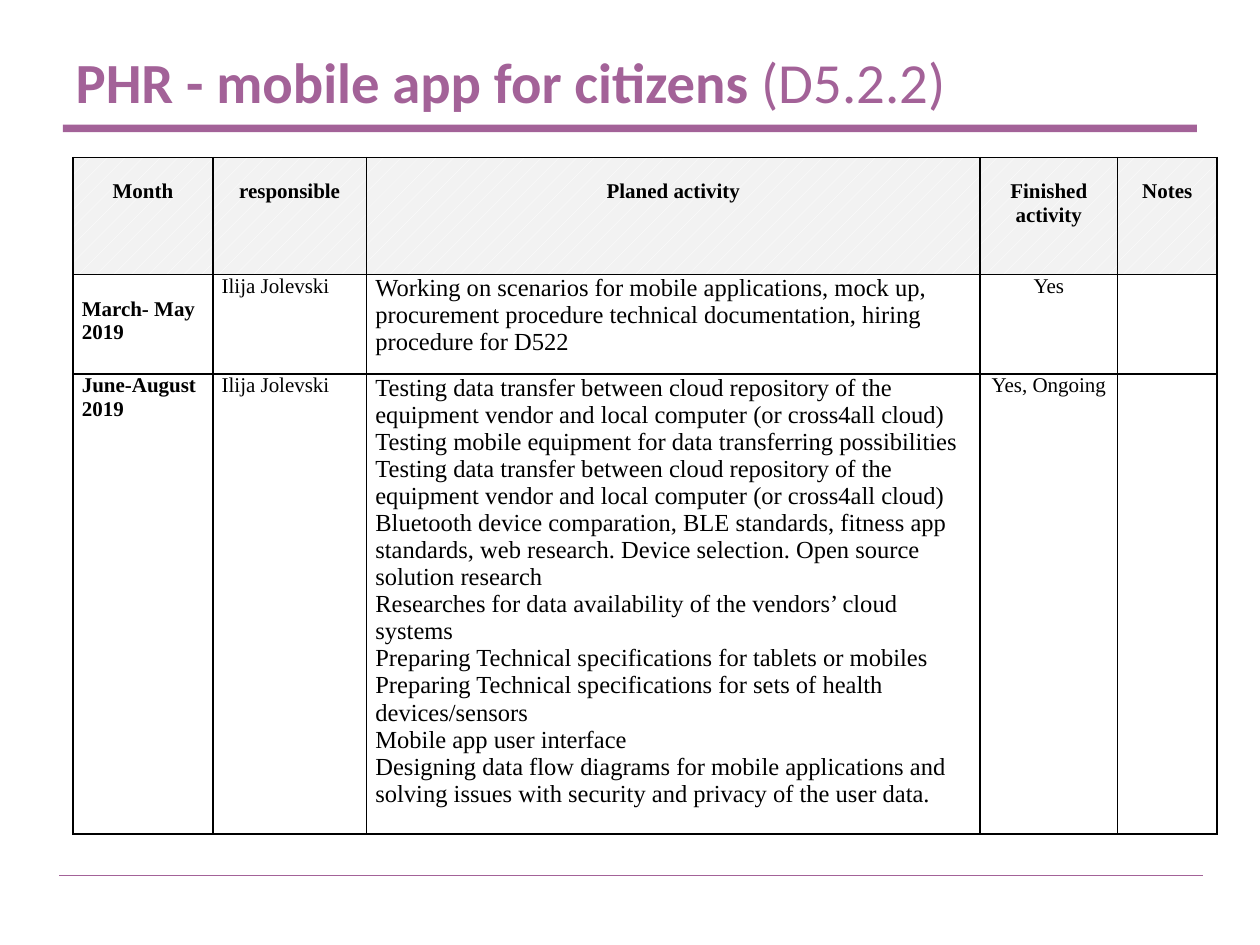
import dataclasses

import lxml.etree
import pptx
import pptx.dml.color
import pptx.enum.dml
import pptx.enum.shapes
import pptx.enum.text
import pptx.oxml.ns
import pptx.util

Inches = pptx.util.Inches
Pt = pptx.util.Pt
ALIGN = pptx.enum.text.PP_ALIGN
qn = pptx.oxml.ns.qn


@dataclasses.dataclass(frozen=True)
class Theme:
    accent: str = "A36298"
    ink: str = "000000"
    header_back: str = "F2F2F2"
    header_dots: str = "FFFFFF"
    title_font: str = "Calibri"
    table_font: str = "Times New Roman"
    title_size: float = 32.4
    label_size: float = 12
    activity_size: float = 14


def rgb(value):
    return pptx.dml.color.RGBColor.from_string(value)


class SlideBuilder:
    def __init__(self, prs, theme):
        self.theme = theme
        self.slide = prs.slides.add_slide(prs.slide_layouts[5])

    def format_font(self, font, name, size, color, bold):
        font.name, font.size, font.bold = name, Pt(size), bold
        font.color.rgb = rgb(color)

    def title(self, parts, left, top, width, height):
        """Fill the title with (text, bold) parts."""
        sp = self.slide.shapes.title
        sp.left, sp.top = Inches(left), Inches(top)
        sp.width, sp.height = Inches(width), Inches(height)
        tf = sp.text_frame
        tf.auto_size = pptx.enum.text.MSO_AUTO_SIZE.NONE
        tf.vertical_anchor = pptx.enum.text.MSO_ANCHOR.MIDDLE
        p = tf.paragraphs[0]
        p.alignment = ALIGN.LEFT
        for text, bold in parts:
            r = p.add_run()
            r.text = text
            self.format_font(r.font, self.theme.title_font, self.theme.title_size,
                             self.theme.accent, bold)

    def bar(self, left, top, width, height):
        sp = self.slide.shapes.add_shape(
            pptx.enum.shapes.MSO_SHAPE.RECTANGLE,
            Inches(left), Inches(top), Inches(width), Inches(height))
        sp.shadow.inherit = False
        sp.fill.solid()
        sp.fill.fore_color.rgb = rgb(self.theme.accent)
        sp.line.fill.background()

    def rule(self, left, right, y):
        line = self.slide.shapes.add_connector(
            pptx.enum.shapes.MSO_CONNECTOR.STRAIGHT,
            Inches(left), Inches(y), Inches(right), Inches(y))
        line.line.color.rgb = rgb(self.theme.accent)
        line.line.width = Pt(0.75)
        lxml.etree.SubElement(line._element.spPr, qn("a:effectLst"))

    def table(self, left, top, widths, heights):
        table = self.slide.shapes.add_table(
            len(heights), len(widths), Inches(left), Inches(top),
            Inches(sum(widths)), Inches(sum(heights))).table
        table.first_row = table.horz_banding = False
        for column, width in zip(table.columns, widths):
            column.width = Inches(width)
        for row, height in zip(table.rows, heights):
            row.height = Inches(height)
        return table

    def borders(self, cell):
        tc_pr = cell._tc.get_or_add_tcPr()
        for side in ("lnL", "lnR", "lnT", "lnB"):
            ln = lxml.etree.SubElement(tc_pr, qn(f"a:{side}"), w=str(Pt(1)))
            fill = lxml.etree.SubElement(ln, qn("a:solidFill"))
            lxml.etree.SubElement(fill, qn("a:srgbClr"), val=self.theme.ink)

    def cell(self, cell, text, size, bold=False, align=ALIGN.LEFT, space_above=0.0, header=False):
        self.borders(cell)
        if header:
            cell.fill.patterned()
            cell.fill.pattern = pptx.enum.dml.MSO_PATTERN.PERCENT_5
            cell.fill.fore_color.rgb = rgb(self.theme.header_dots)
            cell.fill.back_color.rgb = rgb(self.theme.header_back)
        else:
            cell.fill.background()
        cell.margin_left = cell.margin_right = Inches(0.07)
        cell.margin_top, cell.margin_bottom = Inches(space_above), 0
        cell.text_frame.text = text
        for p in cell.text_frame.paragraphs:
            p.alignment = align
            self.format_font(p.font, self.theme.table_font, size, self.theme.ink, bold)
            for r in p.runs:
                self.format_font(r.font, self.theme.table_font, size, self.theme.ink, bold)


HEADERS = ["Month", "responsible", "Planed activity", "Finished activity", "Notes"]
TRANSFER_TEST = ("Testing data transfer between cloud repository of the equipment vendor "
                 "and local computer (or cross4all cloud)")
SUMMER_ACTIVITIES = [
    TRANSFER_TEST,
    "Testing mobile equipment for data transferring possibilities",
    TRANSFER_TEST,
    "Bluetooth device comparation, BLE standards, fitness app standards, web research. "
    "Device selection. Open source solution research",
    "Researches for data availability of the vendors’ cloud systems",
    "Preparing Technical specifications for tablets or mobiles",
    "Preparing Technical specifications for sets of health devices/sensors",
    "Mobile app user interface",
    "Designing data flow diagrams for mobile applications and solving issues with "
    "security and privacy of the user data.",
]
PLAN = [
    ["March- May 2019", "Ilija Jolevski",
     "Working on scenarios for mobile applications, mock up, procurement procedure "
     "technical documentation, hiring procedure for D522", "Yes", ""],
    ["June-August 2019", "Ilija Jolevski", "\n".join(SUMMER_ACTIVITIES), "Yes, Ongoing", ""],
]
LABEL_GAP = 0.18


def main():
    prs = pptx.Presentation()
    prs.slide_width, prs.slide_height = Inches(10), Inches(7.5)
    theme = Theme()
    s = SlideBuilder(prs, theme)

    s.rule(0.47, 9.55, 6.95)
    s.bar(0.5, 0.99, 9, 0.06)
    s.title([("PHR - mobile app for citizens ", True), ("(D5.2.2)", False)], 0.5, 0.3, 9, 0.69)

    table = s.table(0.58, 1.25, [1.11, 1.22, 4.87, 1.09, 0.79], [0.93, 0.79, 3.65])
    for col, text in enumerate(HEADERS):
        s.cell(table.cell(0, col), text, theme.label_size, bold=True, align=ALIGN.CENTER,
               space_above=LABEL_GAP, header=True)
    for row, texts in enumerate(PLAN, start=1):
        for col, text in enumerate(texts):
            column = HEADERS[col]
            is_month = column == "Month"
            s.cell(table.cell(row, col), text,
                   theme.activity_size if column == "Planed activity" else theme.label_size,
                   bold=is_month,
                   align=ALIGN.CENTER if column == "Finished activity" else ALIGN.LEFT,
                   space_above=LABEL_GAP if is_month and row == 1 else 0)

    prs.save("out.pptx")


if __name__ == "__main__":
    main()
